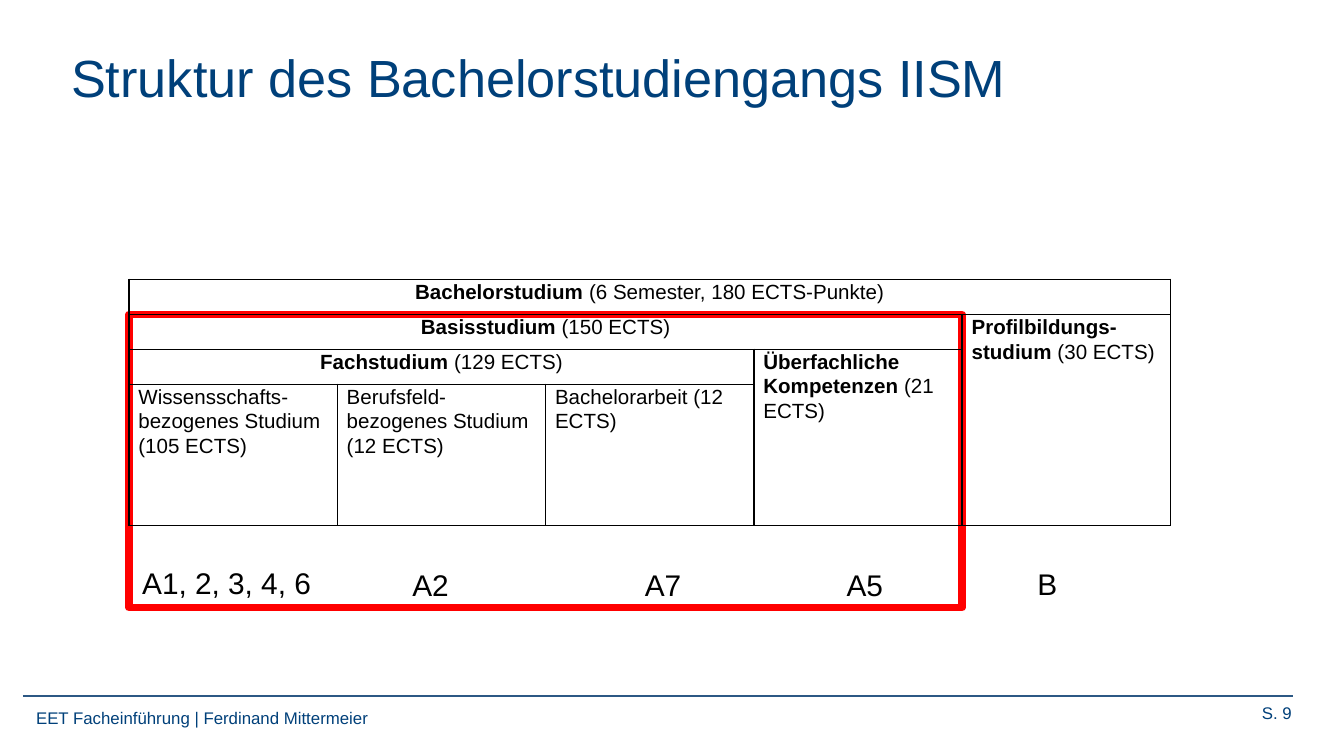
from dataclasses import dataclass

from lxml.etree import SubElement
from pptx import Presentation
from pptx.dml.color import RGBColor
from pptx.enum.shapes import MSO_CONNECTOR as Connector, MSO_SHAPE as Shape
from pptx.enum.text import MSO_ANCHOR as Anchor, MSO_AUTO_SIZE as AutoSize, PP_ALIGN as Align
from pptx.oxml import parse_xml
from pptx.oxml.ns import nsdecls, qn
from pptx.util import Inches, Pt

FONT = "Arial"
BLUE, BLACK, RED, RULE = "00407A", "000000", "FF0000", "2C5884"
TABLE_LEFT, TABLE_TOP, COLUMN_WIDTH = 0.96, 2.08, 1.55
ROW_HEIGHTS = [0.26, 0.26, 0.26, 1.05]


@dataclass
class Label:
    text: str
    left: float
    top: float
    width: float


@dataclass
class Block:
    row: int
    column: int
    bold: str
    plain: str
    rows: int = 1
    columns: int = 1


LABELS = [
    Label("A1, 2, 3, 4, 6", 0.96, 4.15, 1.48),
    Label("A2", 2.97, 4.17, 0.48),
    Label("A7", 4.7, 4.17, 0.48),
    Label("A5", 6.2, 4.17, 0.48),
    Label("B", 7.62, 4.16, 0.35),
]
BLOCKS = [
    Block(0, 0, "Bachelorstudium", " (6 Semester, 180 ECTS-Punkte)", columns=5),
    Block(1, 0, "Basisstudium", " (150 ECTS)", columns=4),
    Block(1, 4, "Profilbildungs-studium", " (30 ECTS)", rows=3),
    Block(2, 0, "Fachstudium ", "(129 ECTS)", columns=3),
    Block(2, 3, "Überfachliche Kompetenzen", " (21 ECTS)", rows=2),
    Block(3, 0, "", "Wissensschafts-bezogenes Studium (105 ECTS)"),
    Block(3, 1, "", "Berufsfeld-bezogenes Studium (12 ECTS)"),
    Block(3, 2, "", "Bachelorarbeit (12 ECTS)"),
]


def color(value: str) -> RGBColor:
    return RGBColor.from_string(value)


def style(para, size: float, value: str, align=Align.LEFT) -> None:
    para.alignment = align
    para.font.name = FONT
    para.font.size = Pt(size)
    para.font.color.rgb = color(value)


def add_text(page, label: Label, height: float, size: float, value: str,
             align=Align.LEFT, wrap: bool = True) -> None:
    box = page.shapes.add_textbox(Inches(label.left), Inches(label.top),
                                  Inches(label.width), Inches(height))
    frame = box.text_frame
    frame.word_wrap = wrap
    frame.auto_size = AutoSize.NONE if wrap else AutoSize.SHAPE_TO_FIT_TEXT
    para = frame.paragraphs[0]
    para.text = label.text
    style(para, size, value, align)


def format_cell(cell) -> None:
    cell.margin_left = cell.margin_right = Inches(0.07)
    cell.margin_top = cell.margin_bottom = 0
    cell.fill.background()
    properties = cell._tc.get_or_add_tcPr()
    for index, side in enumerate(("lnL", "lnR", "lnT", "lnB")):
        properties.insert(index, parse_xml(
            f'<a:{side} {nsdecls("a")} w="{Pt(1)}"><a:solidFill>'
            f'<a:srgbClr val="{BLACK}"/></a:solidFill></a:{side}>'))
    style(cell.text_frame.paragraphs[0], 11, BLACK)


def fill_block(table, block: Block) -> None:
    cell = table.cell(block.row, block.column)
    if block.rows > 1 or block.columns > 1:
        cell.merge(table.cell(block.row + block.rows - 1, block.column + block.columns - 1))
    para = cell.text_frame.paragraphs[0]
    para.line_spacing = 1.07
    para.alignment = Align.CENTER if block.columns > 1 else Align.LEFT
    for text, bold in ((block.bold, True), (block.plain, False)):
        if text:
            span = para.add_run()
            span.text = text
            span.font.bold = bold


def add_structure(page) -> None:
    columns = 5
    frame = page.shapes.add_table(
        len(ROW_HEIGHTS), columns, Inches(TABLE_LEFT), Inches(TABLE_TOP),
        Inches(columns * COLUMN_WIDTH), Inches(sum(ROW_HEIGHTS)))
    table = frame.table
    table.first_row = table.horz_banding = False
    for column in table.columns:
        column.width = Inches(COLUMN_WIDTH)
    for row, height in zip(table.rows, ROW_HEIGHTS):
        row.height = Inches(height)
    for cell in table.iter_cells():
        format_cell(cell)
    for block in BLOCKS:
        fill_block(table, block)


def main() -> None:
    # Widescreen page, 16:9
    deck = Presentation()
    deck.slide_width = Inches(10)
    deck.slide_height = deck.slide_width * 9 // 16
    page = deck.slides.add_slide(deck.slide_layouts[5])

    # Title
    title = page.shapes.title
    title.left, title.top = Inches(0.43), Inches(0.29)
    title.width, title.height = Inches(8.03), Inches(0.94)
    frame = title.text_frame
    frame.text = "Struktur des Bachelorstudiengangs IISM"
    frame.vertical_anchor = Anchor.TOP
    frame.auto_size = AutoSize.NONE
    frame.margin_top = Inches(0.05)
    style(frame.paragraphs[0], 28, BLUE)

    # Footer
    rule = page.shapes.add_connector(Connector.STRAIGHT, Inches(0.17), Inches(5.18),
                                     Inches(9.62), Inches(5.18))
    rule.line.color.rgb = color(RULE)
    rule.line.width = Pt(0.75)
    SubElement(rule._element.spPr, qn("a:effectLst"))
    add_text(page, Label("EET Facheinführung | Ferdinand Mittermeier", 0.17, 5.22, 7.35),
             0.19, 9, BLUE)
    add_text(page, Label("S. 9", 8.54, 5.18, 1.17), 0.25, 9, BLUE, Align.RIGHT)

    # Module labels below the table
    for label in LABELS:
        add_text(page, label, 0.37, 16, BLACK, wrap=False)

    # Red frame around the basic studies
    outline = page.shapes.add_shape(Shape.RECTANGLE, Inches(TABLE_LEFT), Inches(2.34),
                                    Inches(4 * COLUMN_WIDTH), Inches(2.18))
    outline.shadow.inherit = False
    outline.fill.background()
    outline.line.color.rgb = color(RED)
    outline.line.width = Pt(4)

    # Programme structure
    add_structure(page)
    deck.save("out.pptx")


if __name__ == "__main__":
    main()
